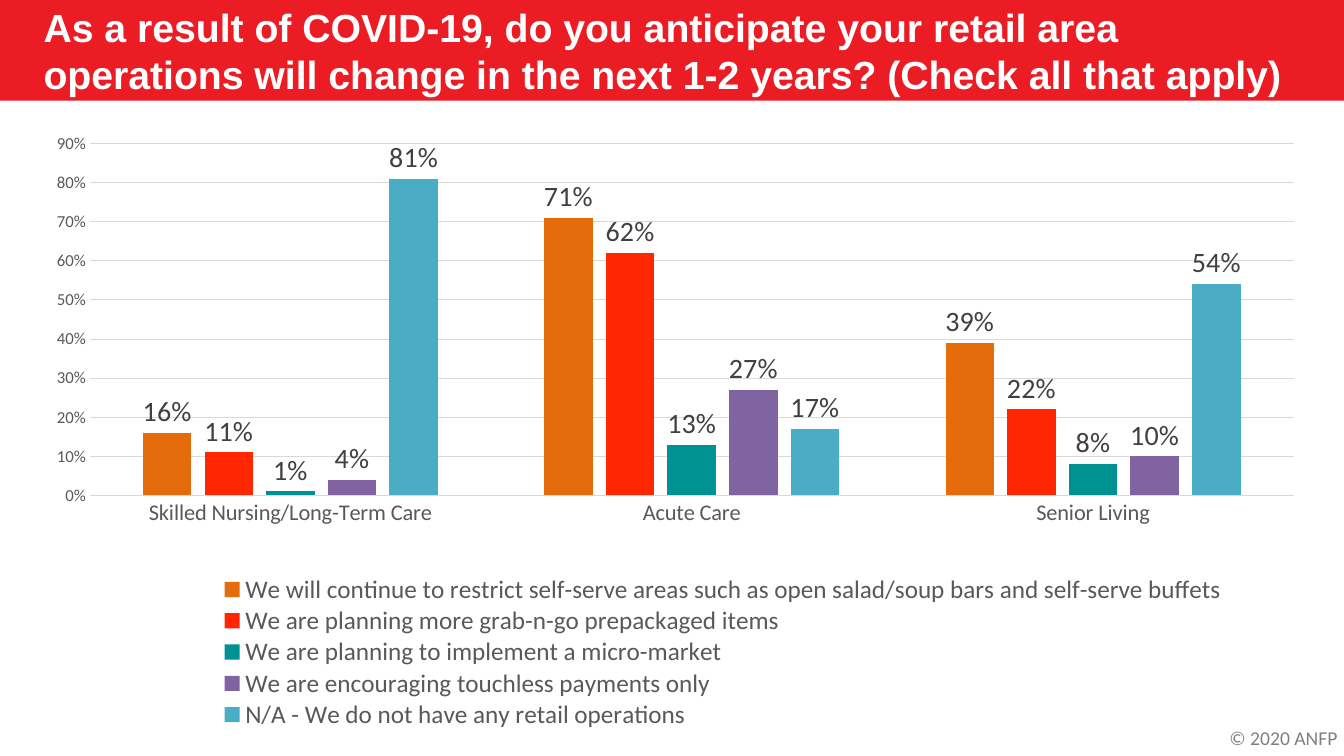
from lxml import etree
from pptx import Presentation
from pptx.chart.data import CategoryChartData
from pptx.dml.color import RGBColor
from pptx.enum.chart import XL_CHART_TYPE, XL_LABEL_POSITION, XL_LEGEND_POSITION, XL_TICK_MARK
from pptx.enum.shapes import MSO_SHAPE
from pptx.enum.text import MSO_ANCHOR, PP_ALIGN
from pptx.oxml.ns import qn
from pptx.util import Emu, Pt

COLUMNS = XL_CHART_TYPE.COLUMN_CLUSTERED
OUTSIDE_END = XL_LABEL_POSITION.OUTSIDE_END
BOTTOM = XL_LEGEND_POSITION.BOTTOM
NO_TICK = XL_TICK_MARK.NONE
RECTANGLE = MSO_SHAPE.RECTANGLE
MIDDLE, TOP = MSO_ANCHOR.MIDDLE, MSO_ANCHOR.TOP
LEFT, CENTER = PP_ALIGN.LEFT, PP_ALIGN.CENTER

PX = 9525  # EMU per px, 96 px to the inch
COLORS = {
    "banner": "EC1C24", "title": "FFFFFF", "footer": "808080",
    "axis": "595959", "label": "404040", "grid": "D9D9D9", "chart": "000000",
    "restrict": "E46C0A", "grab": "FF2600", "market": "009193",
    "touchless": "8064A2", "none": "4BACC6",
}

TITLE = ("As a result of COVID-19, do you anticipate your retail area operations "
         "will change in the next 1-2 years? (Check all that apply)")
SETTINGS = ["Skilled Nursing/Long-Term Care", "Acute Care", "Senior Living"]
ANSWERS = [
    ("We will continue to restrict self-serve areas such as open salad/soup bars "
     "and self-serve buffets", "restrict", (0.16, 0.71, 0.39)),
    ("We are planning more grab-n-go prepackaged items", "grab", (0.11, 0.62, 0.22)),
    ("We are planning to implement a micro-market", "market", (0.01, 0.13, 0.08)),
    ("We are encouraging touchless payments only", "touchless", (0.04, 0.27, 0.1)),
    ("N/A - We do not have any retail operations", "none", (0.81, 0.17, 0.54)),
]


def px(*lengths):
    return [Emu(length * PX) for length in lengths]


def color(name):
    return RGBColor.from_string(COLORS[name])


def style_font(font, size, name, face="Calibri", bold=False):
    font.size, font.name, font.bold = Pt(size), face, bold
    font.color.rgb = color(name)


def style_line(line, name):
    line.color.rgb = color(name)
    line.width = Pt(0.75)


def add_banner(slide, *box):
    banner = slide.shapes.add_shape(RECTANGLE, *px(*box))
    banner.shadow.inherit = False
    banner.fill.solid()
    banner.fill.fore_color.rgb = color("banner")
    banner.line.fill.background()


def add_text(slide, box, text, size, name, face="Calibri", bold=False,
             align=LEFT, anchor=TOP, wrap=True):
    frame = slide.shapes.add_textbox(*px(*box)).text_frame
    frame.word_wrap = wrap
    frame.vertical_anchor = anchor
    frame.text = text
    paragraph = frame.paragraphs[0]
    paragraph.alignment = align
    style_font(paragraph.runs[0].font, size, name, face, bold)


def place(layout, x, y, w, h, inner=False):
    """Fill a chart layout element with fractions of the chart area."""
    manual = etree.SubElement(layout, qn("c:manualLayout"))
    settings = [("layoutTarget", "inner")] if inner else []
    settings += [("xMode", "edge"), ("yMode", "edge"),
                 ("x", x), ("y", y), ("w", w), ("h", h)]
    for tag, value in settings:
        etree.SubElement(manual, qn(f"c:{tag}")).set("val", str(value))


def style_axes(chart):
    settings, share = chart.category_axis, chart.value_axis
    for axis, size in ((settings, 16), (share, 12)):
        axis.major_tick_mark = axis.minor_tick_mark = NO_TICK
        style_font(axis.tick_labels.font, size, "axis")
    style_line(settings.format.line, "grid")
    share.format.line.fill.background()
    share.minimum_scale, share.maximum_scale, share.major_unit = 0, 0.9, 0.1
    share.has_major_gridlines = True
    style_line(share.major_gridlines.format.line, "grid")
    share.tick_labels.number_format = "0%"
    share.tick_labels.number_format_is_linked = False


def style_series(series, name):
    series.format.fill.solid()
    series.format.fill.fore_color.rgb = color(name)
    series.invert_if_negative = False
    labels = series.data_labels
    labels.show_value = True
    labels.position = OUTSIDE_END
    labels.number_format = "0%"
    labels.number_format_is_linked = False
    style_font(labels.font, 20, "label")


def add_answer_chart(slide, *box):
    data = CategoryChartData(number_format="0%")
    data.categories = SETTINGS
    for answer, _, shares in ANSWERS:
        data.add_series(answer, shares)
    chart = slide.shapes.add_chart(COLUMNS, *px(*box), data).chart
    chart.has_title = False
    style_font(chart.font, 10, "chart")
    style_axes(chart)

    # Columns
    plot = chart.plots[0]
    plot.gap_width, plot.overlap, plot.vary_by_categories = 219, -27, False
    for series, (_, name, _) in zip(plot.series, ANSWERS):
        style_series(series, name)

    # Legend
    chart.has_legend = True
    legend = chart.legend
    legend.position = BOTTOM
    legend.include_in_layout = False
    style_font(legend.font, 18, "axis")

    # Positions of plot and legend
    plot_area = chart.element.find(f".//{qn('c:plotArea')}")
    for old in plot_area.findall(qn("c:layout")):
        plot_area.remove(old)
    plot_layout = etree.Element(qn("c:layout"))
    plot_area.insert(0, plot_layout)
    place(plot_layout, 0.044, 0.029, 0.943, 0.582, inner=True)

    legend_element = chart.element.find(f".//{qn('c:legend')}")
    for old in legend_element.findall(qn("c:layout")):
        legend_element.remove(old)
    legend_layout = etree.Element(qn("c:layout"))
    legend_element.find(qn("c:legendPos")).addnext(legend_layout)
    place(legend_layout, 0.14, 0.74, 0.8, 0.26)


def main():
    deck = Presentation()
    deck.slide_width, deck.slide_height = px(1280, 720)
    slide = deck.slides.add_slide(deck.slide_layouts[6])

    # Heading
    add_banner(slide, 0, 0, 1280, 96)
    add_text(slide, (32, 12, 1233, 72), TITLE, 28, "title", "Arial",
             bold=True, anchor=MIDDLE)
    # Survey results
    add_answer_chart(slide, 32, 120, 1216, 576)
    # Copyright
    add_text(slide, (1160, 687, 125, 33), "© 2020 ANFP", 14, "footer",
             align=CENTER, wrap=False)

    deck.save("out.pptx")


if __name__ == "__main__":
    main()
